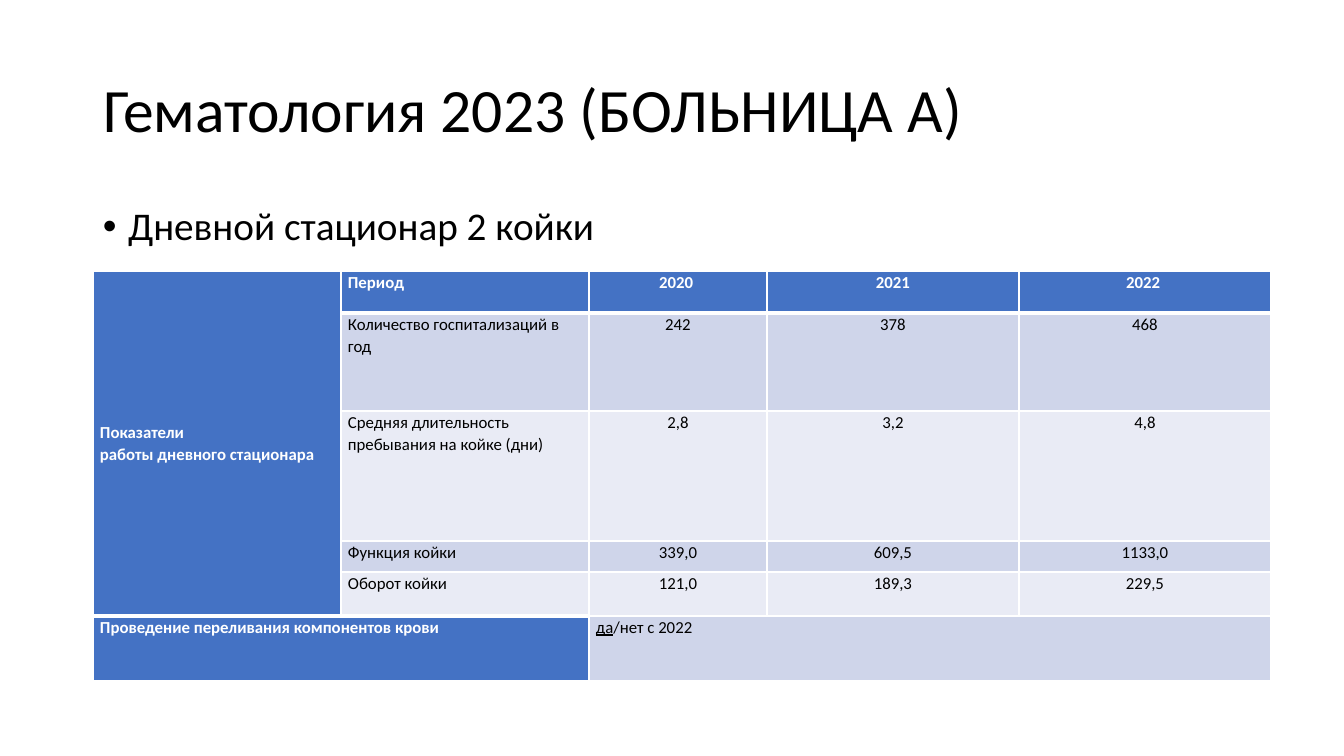
from lxml.etree import SubElement
from pptx import Presentation
from pptx.dml.color import RGBColor
from pptx.enum.text import MSO_ANCHOR as ANCHOR, PP_ALIGN as ALIGN
from pptx.oxml.ns import qn
from pptx.util import Pt

EMU_PER_PX = 914400 / 100.8
FONT = "Calibri"
BLACK = RGBColor(0x00, 0x00, 0x00)
WHITE = RGBColor(0xFF, 0xFF, 0xFF)
BLUE = RGBColor(0x44, 0x72, 0xC4)
BAND_DARK = RGBColor(0xCF, 0xD5, 0xEA)
BAND_LIGHT = RGBColor(0xE9, 0xEB, 0xF5)

COL_WIDTHS = [248, 248, 178, 252, 252]
ROW_HEIGHTS = [42, 98, 130, 31, 44, 65]
SIDE_LABEL = ["Показатели", "работы дневного стационара"]
ROWS = [
    ["Период", "2020 ", "2021", "2022 "],
    ["Количество госпитализаций в год", "242", "378", "468"],
    ["Средняя длительность пребывания на койке (дни)", "2,8", "3,2", "4,8"],
    ["Функция койки", "339,0", "609,5", "1133,0"],
    ["Оборот койки", "121,0", "189,3", "229,5"],
]
LAST = len(ROWS)


def px(n):
    """Turn pixels into EMU."""
    return round(n * EMU_PER_PX)


def add_run(p, text, size, color=BLACK, bold=False, underline=False):
    """Add one formatted run to a paragraph."""
    r = p.add_run()
    r.text = text
    r.font.name = FONT
    r.font.size = Pt(size)
    r.font.color.rgb = color
    r.font.bold = bold
    r.font.underline = underline


def add_title(s, text):
    """Place and fill the title placeholder."""
    sp = s.shapes.title
    sp.left, sp.top, sp.width, sp.height = px(93), px(40), px(1159), px(146)
    tf = sp.text_frame
    tf.vertical_anchor = ANCHOR.MIDDLE
    p = tf.paragraphs[0]
    p.alignment = ALIGN.LEFT
    p.line_spacing = 0.9
    add_run(p, text, 44)


def add_bullet(s, text):
    """Add the bulleted line above the table."""
    sp = s.shapes.add_textbox(px(93), px(202), px(1159), px(480))
    tf = sp.text_frame
    tf.word_wrap = True
    p = tf.paragraphs[0]
    p.line_spacing = 0.9
    p.space_before = Pt(10)
    pPr = p._p.get_or_add_pPr()
    pPr.set("marL", "228600")
    pPr.set("indent", "-228600")
    SubElement(pPr, qn("a:buFont"), typeface="Arial")
    SubElement(pPr, qn("a:buChar"), char="•")
    add_run(p, text, 28)


def edge_width(row, col):
    """Give the width in points of the line above a cell."""
    return 3 if row == 1 or (row == LAST and col < 2) else 1


def set_borders(cell, row, col):
    """Draw white lines on the four sides of a cell."""
    tcPr = cell._tc.get_or_add_tcPr()
    widths = {"L": 1, "R": 1, "T": edge_width(row, col), "B": edge_width(row + 1, col)}
    for side, width in widths.items():
        ln = SubElement(tcPr, qn(f"a:ln{side}"), w=str(Pt(width)))
        fill = SubElement(ln, qn("a:solidFill"))
        SubElement(fill, qn("a:srgbClr"), val=str(WHITE))


def format_cell(cell, row, col):
    """Set borders, fill and margins of a cell."""
    set_borders(cell, row, col)
    header = row == 0 or col == 0
    cell.fill.solid()
    cell.fill.fore_color.rgb = BLUE if header else BAND_DARK if row % 2 else BAND_LIGHT
    cell.margin_left = cell.margin_right = px(7)
    cell.margin_top = cell.margin_bottom = 0


def write_cell(cell, lines, header=False, align=ALIGN.LEFT):
    """Write lines of text into a cell."""
    tf = cell.text_frame
    for i, line in enumerate(lines):
        p = tf.add_paragraph() if i else tf.paragraphs[0]
        p.alignment = align
        p.line_spacing = 1.07
        add_run(p, line, 12, WHITE if header else BLACK, header)


def add_indicators(s):
    """Add the table of day hospital indicators."""
    frame = s.shapes.add_table(LAST + 1, len(COL_WIDTHS), px(93), px(271),
                               px(sum(COL_WIDTHS)), px(sum(ROW_HEIGHTS)))
    table = frame.table
    for col, width in zip(table.columns, COL_WIDTHS):
        col.width = px(width)
    for i, height in enumerate(ROW_HEIGHTS):
        table.rows[i].height = px(height)
        for j in range(len(COL_WIDTHS)):
            format_cell(table.cell(i, j), i, j)

    for i, row in enumerate(ROWS):
        for j, text in enumerate(row, 1):
            align = ALIGN.CENTER if j > 1 else ALIGN.LEFT
            write_cell(table.cell(i, j), [text], i == 0, align)

    side = table.cell(0, 0)
    side.merge(table.cell(LAST - 1, 0))
    side.vertical_anchor = ANCHOR.MIDDLE
    write_cell(side, SIDE_LABEL, True)

    transfusion = table.cell(LAST, 0)
    transfusion.merge(table.cell(LAST, 1))
    write_cell(transfusion, ["Проведение переливания компонентов крови"], True)

    answer = table.cell(LAST, 2)
    answer.merge(table.cell(LAST, 4))
    p = answer.text_frame.paragraphs[0]
    p.line_spacing = 1.07
    add_run(p, "да", 12, underline=True)
    add_run(p, "/нет с 2022", 12)


def main():
    """Build and save the slide."""
    prs = Presentation()
    prs.slide_width, prs.slide_height = px(1344), px(756)
    s = prs.slides.add_slide(prs.slide_layouts[5])
    add_title(s, "Гематология 2023 (БОЛЬНИЦА А)")
    add_bullet(s, "Дневной стационар 2 койки")
    add_indicators(s)
    prs.save("out.pptx")


if __name__ == "__main__":
    main()
